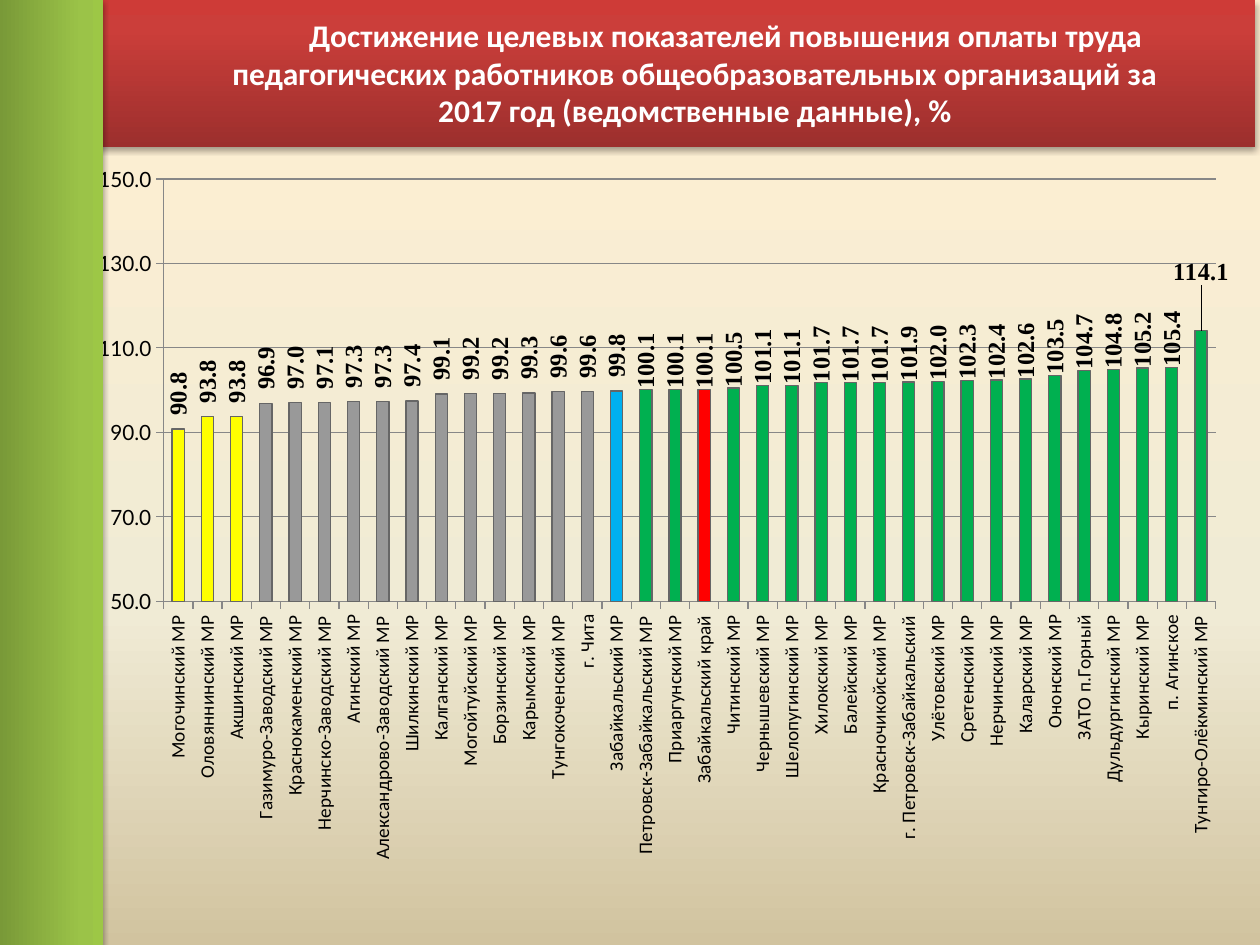
import pptx
import pptx.chart.data
import pptx.dml.color
import pptx.enum.chart
import pptx.enum.shapes
import pptx.enum.text
import pptx.oxml
import pptx.oxml.ns
import pptx.util

Inches, Pt = pptx.util.Inches, pptx.util.Pt
qn = pptx.oxml.ns.qn
NS = pptx.oxml.ns.nsdecls("a", "c")

COLORS = {
    "low": "FFFF00", "below": "999999", "near": "00B0F0", "met": "00B050",
    "region": "FF0000", "bar_line": "666666", "grid": "878787",
    "text": "000000", "title": "FFFFFF",
}
BACKGROUND = [(0, "FFEFD1"), (65, "F0EBD5"), (100, "D1C39F")]
RED = [(0, "9C2F2D"), (80, "CB3E3A"), (100, "CE3B37")]
GREEN = [(0, "779737"), (80, "9BC348"), (100, "9DC746")]

TITLE = ("Достижение целевых показателей повышения оплаты труда педагогических "
         "работников общеобразовательных организаций за 2017 год "
         "(ведомственные данные), %")
REGION = "Забайкальский край"
DATA = [
    ("Могочинский МР", 90.8), ("Оловяннинский МР", 93.8), ("Акшинский МР", 93.8),
    ("Газимуро-Заводский МР", 96.9), ("Краснокаменский МР", 97.0),
    ("Нерчинско-Заводский МР", 97.1), ("Агинский МР", 97.3),
    ("Александрово-Заводский МР", 97.3), ("Шилкинский МР", 97.4),
    ("Калганский МР", 99.1), ("Могойтуйский МР", 99.2), ("Борзинский МР", 99.2),
    ("Карымский МР", 99.3), ("Тунгокоченский МР", 99.6), ("г. Чита", 99.6),
    ("Забайкальский МР", 99.8), ("Петровск-Забайкальский МР", 100.1),
    ("Приаргунский МР", 100.1), (REGION, 100.1), ("Читинский МР", 100.5),
    ("Чернышевский МР", 101.1), ("Шелопугинский МР", 101.1),
    ("Хилокский МР", 101.7), ("Балейский МР", 101.7),
    ("Красночикойский МР", 101.7), ("г. Петровск-Забайкальский", 101.9),
    ("Улётовский МР", 102.0), ("Сретенский МР", 102.3), ("Нерчинский МР", 102.4),
    ("Каларский МР", 102.6), ("Ононский МР", 103.5), ("ЗАТО п.Горный", 104.7),
    ("Дульдургинский МР", 104.8), ("Кыринский МР", 105.2),
    ("п. Агинское", 105.4), ("Тунгиро-Олёкминский МР", 114.1),
]


def rgb(key):
    return pptx.dml.color.RGBColor.from_string(COLORS[key])


def set_font(font, name, size, color="text", bold=False):
    font.name, font.size, font.bold = name, Pt(size), bold
    font.color.rgb = rgb(color)


def fill_gradient(fill, parent, stops, angle):
    """Give parent a linear gradient; the angle runs clockwise."""
    fill.solid()
    gs = "".join(f'<a:gs pos="{pos * 1000}"><a:srgbClr val="{color}"/></a:gs>'
                 for pos, color in stops)
    grad = pptx.oxml.parse_xml(
        f'<a:gradFill {NS} rotWithShape="1"><a:gsLst>{gs}</a:gsLst>'
        f'<a:lin ang="{angle * 60000}" scaled="0"/></a:gradFill>')
    solid = parent.find(qn("a:solidFill"))
    parent.replace(solid, grad)


def manual_layout(x, y, w=None, h=None):
    """Chart layout: an inner plot area with w and h, otherwise an offset."""
    size = target = modes = ""
    if w is not None:
        target = '<c:layoutTarget val="inner"/>'
        modes = '<c:xMode val="edge"/><c:yMode val="edge"/>'
        size = f'<c:w val="{w}"/><c:h val="{h}"/>'
    return pptx.oxml.parse_xml(
        f'<c:layout {NS}><c:manualLayout>{target}{modes}<c:x val="{x}"/>'
        f'<c:y val="{y}"/>{size}</c:manualLayout></c:layout>')


def bar_color(name, value):
    if name == REGION:
        return "region"
    if value >= 100:
        return "met"
    if value < 95:
        return "low"
    return "near" if value > 99.7 else "below"


def add_band(slide, x, y, w, h, stops, rotation=0):
    sp = slide.shapes.add_shape(pptx.enum.shapes.MSO_SHAPE.RECTANGLE,
                                Inches(x), Inches(y), Inches(w), Inches(h))
    sp.rotation = rotation
    sp.line.fill.background()
    sp.shadow.inherit = False
    props = sp._element.spPr
    fill_gradient(sp.fill, props, stops, 270)
    props.find(qn("a:effectLst")).append(pptx.oxml.parse_xml(
        f'<a:outerShdw {NS} blurRad="{Pt(3.1)}" dist="{Pt(1.8)}" dir="5400000" '
        'rotWithShape="0"><a:srgbClr val="000000"><a:alpha val="35000"/>'
        '</a:srgbClr></a:outerShdw>'))


def add_title(slide, x, y, w, h):
    tf = slide.shapes.add_textbox(Inches(x), Inches(y), Inches(w), Inches(h)).text_frame
    tf.word_wrap = True
    tf.vertical_anchor = pptx.enum.text.MSO_ANCHOR.MIDDLE
    tf.text = TITLE
    p = tf.paragraphs[0]
    p.alignment = pptx.enum.text.PP_ALIGN.CENTER
    p._p.get_or_add_pPr().set("indent", str(Inches(0.49)))
    set_font(p.runs[0].font, "Calibri", 18, "title", True)


def style_axes(chart):
    cat, val = chart.category_axis, chart.value_axis
    for axis in (cat, val):
        axis.major_tick_mark = pptx.enum.chart.XL_TICK_MARK.OUTSIDE
        axis.format.line.color.rgb = rgb("grid")
    cat.has_major_gridlines = False
    set_font(cat.tick_labels.font, "Calibri", 11)
    cat._element.find(qn("c:txPr")).find(qn("a:bodyPr")).set("rot", "-5400000")
    val.minimum_scale, val.maximum_scale, val.major_unit = 50, 150, 20
    val.major_gridlines.format.line.color.rgb = rgb("grid")
    val.tick_labels.number_format = "0.0"
    val.tick_labels.number_format_is_linked = False
    set_font(val.tick_labels.font, "Lato", 12)


def style_bars(series):
    series.format.fill.solid()
    series.format.fill.fore_color.rgb = rgb("below")
    series.format.line.color.rgb = rgb("bar_line")
    series.format.line.width = Pt(0.75)
    last = len(DATA) - 1
    for i, (name, value) in enumerate(DATA):
        point = series.points[i]
        color = bar_color(name, value)
        if color != "below":
            point.format.fill.solid()
            point.format.fill.fore_color.rgb = rgb(color)
            point.format.line.color.rgb = rgb("bar_line")
            point.format.line.width = Pt(0.75)
        label = point.data_label
        set_font(label.font, "Times New Roman", 14, bold=True)
        label.position = pptx.enum.chart.XL_LABEL_POSITION.INSIDE_END
        # Labels stand upright above their bars; the last one lies flat.
        dlbl = series._element.find(qn("c:dLbls")).findall(qn("c:dLbl"))[i]
        dlbl.insert(1, manual_layout(0, -0.1 if i == last else -0.08))
        body = dlbl.find(qn("c:txPr")).find(qn("a:bodyPr"))
        body.set("rot", "0" if i == last else "-5400000")
        body.set("vert", "horz")


def add_pay_chart(slide, x, y, w, h):
    data = pptx.chart.data.CategoryChartData(number_format="0.0")
    data.categories = [name for name, _ in DATA]
    data.add_series("Series 1", [value for _, value in DATA])
    chart = slide.shapes.add_chart(
        pptx.enum.chart.XL_CHART_TYPE.COLUMN_STACKED,
        Inches(x), Inches(y), Inches(w), Inches(h), data).chart
    chart.has_legend = chart.has_title = False
    set_font(chart.font, "Lato", 12)
    plot = chart.plots[0]
    plot.vary_by_categories = False
    plot.gap_width, plot.overlap = 140, 100
    area = chart._chartSpace.chart.plotArea
    for layout in area.findall(qn("c:layout")):
        area.remove(layout)
    area.insert(0, manual_layout(0.047, 0.044, 0.936, 0.546))
    style_axes(chart)
    style_bars(plot.series[0])


def main():
    prs = pptx.Presentation()
    prs.slide_width, prs.slide_height = Inches(10), Inches(7.5)
    slide = prs.slides.add_slide(prs.slide_layouts[6])
    fill = slide.background.fill
    fill.solid()
    fill_gradient(fill, slide._element.cSld.bg.bgPr, BACKGROUND, 90)
    add_pay_chart(slide, 0.78, 1.15, 9.02, 6.14)
    add_band(slide, -0.04, 0, 10, 1.17, RED)
    add_band(slide, -3.36, 3.32, 7.5, 0.86, GREEN, 90)
    add_title(slide, 1.54, 0.08, 7.95, 0.99)
    prs.save("out.pptx")


if __name__ == "__main__":
    main()
